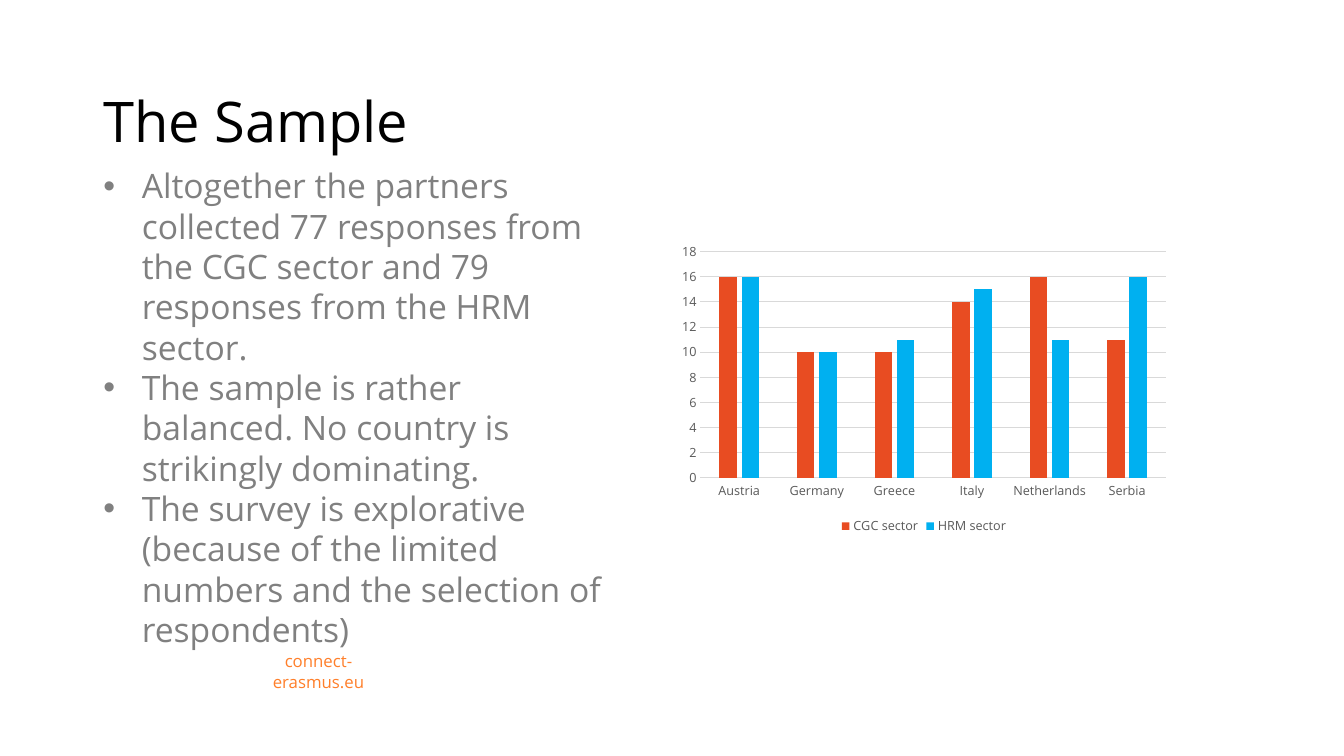
import pptx
import pptx.chart.data
import pptx.dml.color
import pptx.enum.chart
import pptx.enum.text
import pptx.oxml
import pptx.oxml.ns
import pptx.util

RGBColor = pptx.dml.color.RGBColor
BLACK = RGBColor(0x00, 0x00, 0x00)
BODY_GRAY = RGBColor(0x80, 0x80, 0x80)
LABEL_GRAY = RGBColor(0x59, 0x59, 0x59)
GRID_GRAY = RGBColor(0xD9, 0xD9, 0xD9)
ORANGE = RGBColor(0xFF, 0x7F, 0x2A)
RED = RGBColor(0xE8, 0x4C, 0x22)
BLUE = RGBColor(0x00, 0xB0, 0xF0)

FONT_NAME = "Open Sans"
SLIDE_WIDTH = pptx.util.Inches(13.33)
SLIDE_HEIGHT = pptx.util.Inches(7.5)
HANGING_INDENT = pptx.util.Inches(0.38)

TITLE_AREA = (0.0695, 0.1115, 0.348, 0.1)
BODY_AREA = (0.0695, 0.212, 0.392, 0.624)
FOOTER_AREA = (0.171, 0.868, 0.132, 0.04)
CHART_AREA = (0.5, 0.313, 0.375, 0.4)

FINDINGS = [
    "Altogether the partners collected 77 responses from the CGC sector "
    "and 79 responses from the HRM sector.",
    "The sample is rather balanced. No country is strikingly dominating.",
    "The survey is explorative (because of the limited numbers and the "
    "selection of respondents)",
]
COUNTRIES = ["Austria", "Germany", "Greece", "Italy", "Netherlands", "Serbia"]
SECTORS = [
    ("CGC sector", [16, 10, 10, 14, 16, 11], RED),
    ("HRM sector", [16, 10, 11, 15, 11, 16], BLUE),
]


def set_attributes(target, values):
    for name, value in values.items():
        setattr(target, name, value)


def place(area):
    left, top, width, height = area
    return {
        "left": round(left * SLIDE_WIDTH),
        "top": round(top * SLIDE_HEIGHT),
        "width": round(width * SLIDE_WIDTH),
        "height": round(height * SLIDE_HEIGHT),
    }


def format_font(font, size, color):
    set_attributes(font, {"name": FONT_NAME, "size": pptx.util.Pt(size), "bold": False})
    font.color.rgb = color


def format_line(line, color):
    line.color.rgb = color
    line.width = pptx.util.Pt(0.75)


def add_bullet(paragraph):
    properties = paragraph._p.get_or_add_pPr()
    properties.set("marL", str(HANGING_INDENT))
    properties.set("indent", str(-HANGING_INDENT))
    namespace = pptx.oxml.ns.nsdecls("a")
    for element in ('buFont typeface="Arial"', 'buChar char="•"'):
        properties.append(pptx.oxml.parse_xml(f"<a:{element} {namespace}/>"))


def fill_text(shape, area, texts, size, color, frame_format, paragraph_format, bulleted=False):
    set_attributes(shape, place(area))
    frame = shape.text_frame
    frame.text = "\n".join(texts)
    set_attributes(frame, {"word_wrap": True, "auto_size": pptx.enum.text.MSO_AUTO_SIZE.NONE})
    set_attributes(frame, frame_format)
    for paragraph in frame.paragraphs:
        set_attributes(paragraph, {"space_before": pptx.util.Pt(0)})
        set_attributes(paragraph, paragraph_format)
        if bulleted:
            add_bullet(paragraph)
        format_font(paragraph.font, size, color)


def add_sector_chart(slide):
    chart_data = pptx.chart.data.CategoryChartData()
    chart_data.categories = COUNTRIES
    for name, values, color in SECTORS:
        chart_data.add_series(name, values)
    chart = slide.shapes.add_chart(
        pptx.enum.chart.XL_CHART_TYPE.COLUMN_CLUSTERED,
        *place(CHART_AREA).values(),
        chart_data,
    ).chart
    set_attributes(chart, {"has_title": False, "has_legend": True})
    format_font(chart.font, 10, BLACK)

    plot = chart.plots[0]
    set_attributes(plot, {"gap_width": 219, "overlap": -27, "vary_by_categories": False})
    for series, (name, values, color) in zip(plot.series, SECTORS):
        series.format.fill.solid()
        series.format.fill.fore_color.rgb = color

    for axis in (chart.category_axis, chart.value_axis):
        axis.major_tick_mark = pptx.enum.chart.XL_TICK_MARK.NONE
        format_font(axis.tick_labels.font, 9, LABEL_GRAY)
    format_line(chart.category_axis.format.line, GRID_GRAY)
    chart.value_axis.format.line.fill.background()
    set_attributes(chart.value_axis, {
        "minimum_scale": 0, "maximum_scale": 18, "major_unit": 2,
    })
    format_line(chart.value_axis.major_gridlines.format.line, GRID_GRAY)

    set_attributes(chart.legend, {
        "position": pptx.enum.chart.XL_LEGEND_POSITION.BOTTOM,
        "include_in_layout": False,
    })
    format_font(chart.legend.font, 9, LABEL_GRAY)


def main():
    presentation = pptx.Presentation()
    set_attributes(presentation, {"slide_width": SLIDE_WIDTH, "slide_height": SLIDE_HEIGHT})
    slide = presentation.slides.add_slide(presentation.slide_layouts[1])
    anchor = pptx.enum.text.MSO_ANCHOR
    alignment = pptx.enum.text.PP_ALIGN
    fill_text(
        slide.shapes.title, TITLE_AREA, ["The Sample"], 40, BLACK,
        {"vertical_anchor": anchor.BOTTOM},
        {"alignment": alignment.LEFT, "line_spacing": 0.9},
    )
    fill_text(
        slide.placeholders[1], BODY_AREA, FINDINGS, 24, BODY_GRAY,
        {"vertical_anchor": anchor.TOP},
        {"alignment": alignment.LEFT, "line_spacing": 1.0}, bulleted=True,
    )
    footer = slide.shapes.add_textbox(**place(FOOTER_AREA))
    fill_text(
        footer, FOOTER_AREA, ["connect-erasmus.eu"], 12, ORANGE,
        {"vertical_anchor": anchor.MIDDLE},
        {"alignment": alignment.CENTER},
    )
    add_sector_chart(slide)
    presentation.save("out.pptx")


if __name__ == "__main__":
    main()
